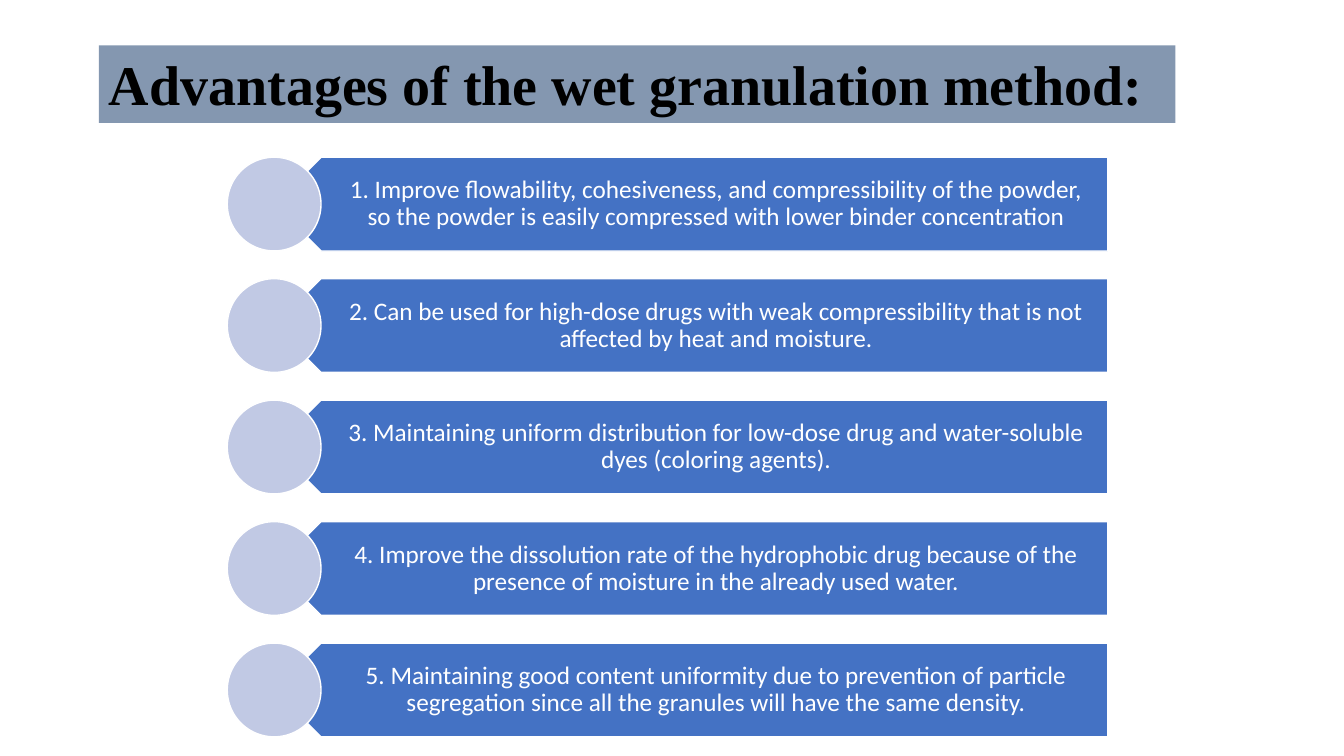
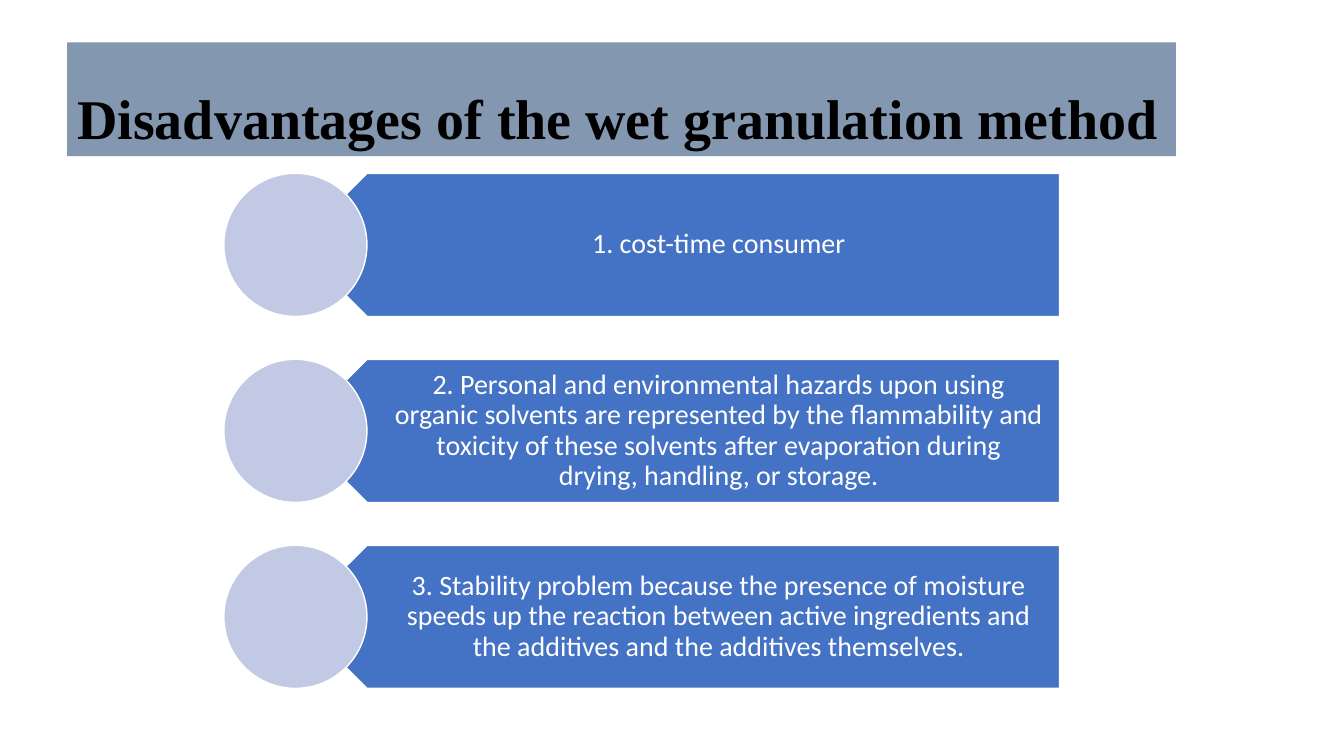
"""Build two slides on the pros and cons of wet granulation."""
from dataclasses import dataclass
from typing import Any

from pptx import Presentation
from pptx.dml.color import RGBColor as Rgb
from pptx.enum.shapes import MSO_SHAPE as Kind
from pptx.enum.text import MSO_ANCHOR as Anchor, MSO_AUTO_SIZE as Fit, PP_ALIGN as Align
from pptx.util import Emu, Inches, Pt

WIDE, HIGH = Inches(13.33), Inches(7.5)
BAND, BAR, DISC, WHITE, BLACK = "8497B0", "4472C4", "C1C9E4", "FFFFFF", "000000"
HEAD = {"name": "Times New Roman", "size": Pt(40), "bold": True}


@dataclass(frozen=True)
class Box:
    """Hold a place in percent of the slide's width and height."""
    left: float
    top: float
    width: float
    height: float

    def place(self) -> dict[str, Emu]:
        """Return the place in slide units."""
        return {
            "left": Emu(round(WIDE * self.left / 100)),
            "top": Emu(round(HIGH * self.top / 100)),
            "width": Emu(round(WIDE * self.width / 100)),
            "height": Emu(round(HIGH * self.height / 100)),
        }


@dataclass(frozen=True)
class Page:
    """Hold a title, its band, the first bar, the last bar's top and the points."""
    title: str
    band: Box
    bar: Box
    last: float
    size: int
    points: tuple[str, ...]


PAGES = (
    Page("Advantages of the wet granulation method:",
         Box(7.35, 6, 80.1, 10.27), Box(20.4, 20.8, 62.03, 12.4), 85.07, 18, (
             "1. Improve flowability, cohesiveness, and compressibility of the powder, "
             "so the powder is easily compressed with lower binder concentration",
             "2. Can be used for high-dose drugs with weak compressibility that is not "
             "affected by heat and moisture.",
             "3. Maintaining uniform distribution for low-dose drug and water-soluble "
             "dyes (coloring agents).",
             "4. Improve the dissolution rate of the hydrophobic drug because of the "
             "presence of moisture in the already used water.",
             "5. Maintaining good content uniformity due to prevention of particle "
             "segregation since all the granules will have the same density.")),
    Page("Disadvantages of the wet granulation method",
         Box(5, 5.6, 82.5, 15.07), Box(21.98, 22.93, 56.85, 18.93), 72.13, 20, (
             "1. cost-time consumer",
             "2. Personal and environmental hazards upon using organic solvents are "
             "represented by the flammability and toxicity of these solvents after "
             "evaporation during drying, handling, or storage.",
             "3. Stability problem because the presence of moisture speeds up the "
             "reaction between active ingredients and the additives and the additives "
             "themselves.")),
)


def apply(item: Any, values: dict[str, Any]) -> None:
    """Set every named value on the item."""
    for name, value in values.items():
        setattr(item, name, value)


def paint(item: Any, tone: str) -> None:
    """Give a fill a solid hex colour."""
    item.solid()
    item.fore_color.rgb = Rgb.from_string(tone)


def write(frame: Any, text: str, form: dict[str, Any], font: dict[str, Any],
          align: Align, tone: str) -> None:
    """Put one styled paragraph in a text frame."""
    frame.text = text
    apply(frame, {"word_wrap": True, "auto_size": Fit.NONE} | form)
    para = frame.paragraphs[0]
    apply(para, {"alignment": align, "line_spacing": 0.9})
    apply(para.font, font)
    paint(para.font.fill, tone)


def draw(group: Any, kind: Kind, place: tuple[int, ...], tone: str) -> Any:
    """Add a filled shape with a thin white edge."""
    shape = group.shapes.add_shape(kind, *place)
    shape.shadow.inherit = False
    paint(shape.fill, tone)
    paint(shape.line.fill, WHITE)
    shape.line.width = Pt(1)
    return shape


def add_point(group: Any, box: Box, text: str, size: int) -> None:
    """Add a bar that points left, its text and its disc."""
    left, top, width, height = box.place().values()
    plate = draw(group, Kind.PENTAGON, (left, top, width, height), BAR)
    plate.rotation = 180
    inset = height // 4
    label = group.shapes.add_textbox(left + inset, top, width - inset, height)
    pad = Pt(size * 0.29)
    form = {"vertical_anchor": Anchor.MIDDLE, "margin_left": Emu(round(height * 0.44)),
            "margin_right": pad * 2, "margin_top": pad, "margin_bottom": pad}
    write(label.text_frame, text, form, {"name": "Calibri", "size": Pt(size)},
          Align.CENTER, WHITE)
    draw(group, Kind.OVAL, (left - height // 2, top, height, height), DISC)


def add_page(deck: Any, page: Page) -> None:
    """Add one slide with a title band and evenly spaced points."""
    slide = deck.slides.add_slide(deck.slide_layouts[5])
    title = slide.shapes.title
    apply(title, page.band.place())
    paint(title.fill, BAND)
    write(title.text_frame, page.title, {"vertical_anchor": Anchor.BOTTOM}, HEAD,
          Align.LEFT, BLACK)
    group = slide.shapes.add_group_shape()
    bar = page.bar
    step = (page.last - bar.top) / (len(page.points) - 1)
    for row, text in enumerate(page.points):
        box = Box(bar.left, bar.top + row * step, bar.width, bar.height)
        add_point(group, box, text, page.size)


def main() -> None:
    """Build and save the deck."""
    deck = Presentation()
    apply(deck, {"slide_width": WIDE, "slide_height": HIGH})
    for page in PAGES:
        add_page(deck, page)
    deck.save("out.pptx")


if __name__ == "__main__":
    main()
